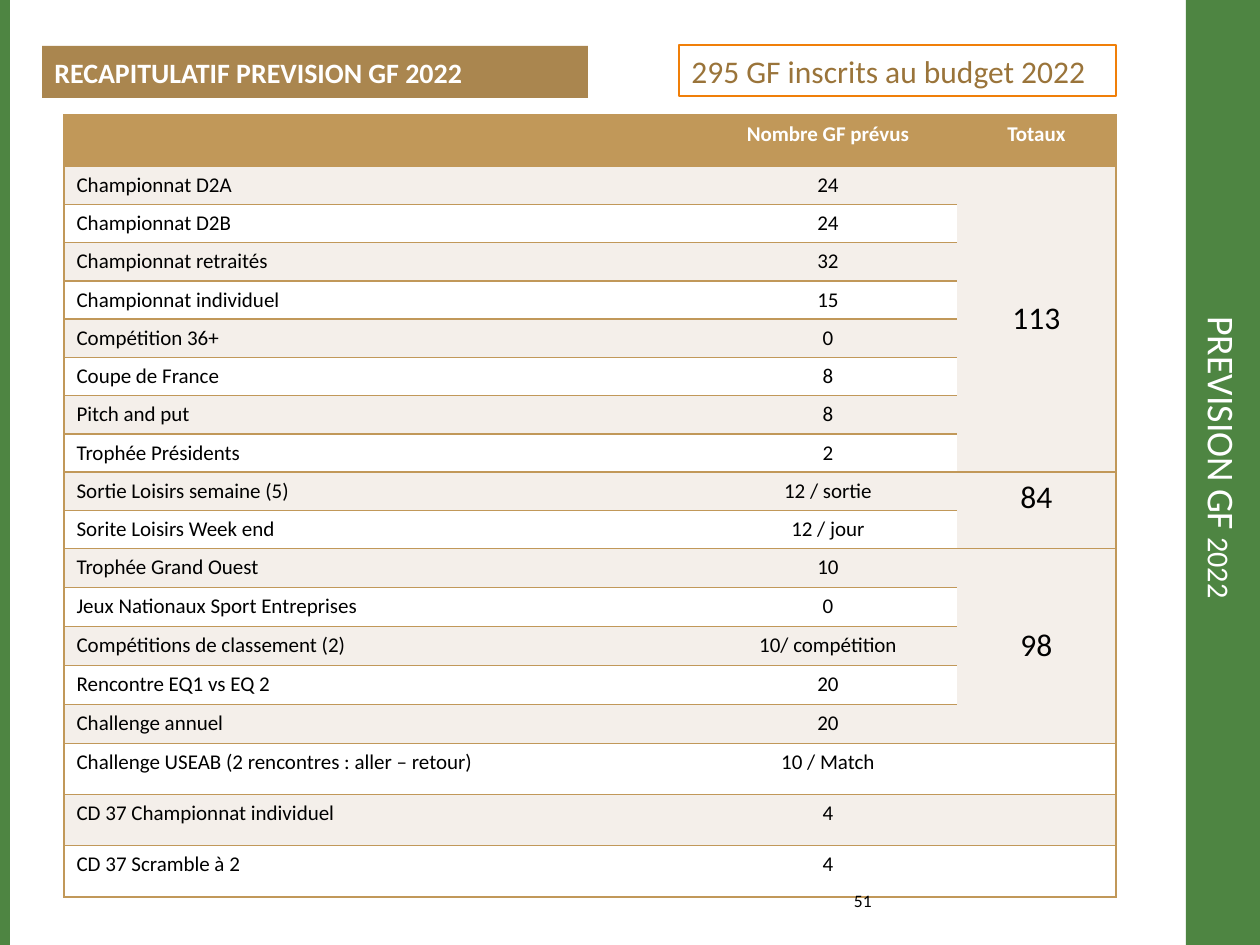
from pptx import Presentation
from pptx.dml.color import RGBColor
from pptx.enum.shapes import MSO_SHAPE as Shape
from pptx.enum.text import MSO_ANCHOR as Anchor, PP_ALIGN as Align
from pptx.oxml.ns import qn
from pptx.util import Pt
from lxml.etree import SubElement

PX = 914400 / 126
GREEN, TAN, CREAM, WHITE, BLACK = "4E8542", "C19859", "F4EFEA", "FFFFFF", "000000"

COLUMNS = [635, 258, 159]
ROW_HEIGHTS = [50] + [38] * 10 + [39] * 5 + [51] * 3
ROWS = [
    ("", "Nombre GF prévus"),
    ("Championnat D2A", "24"),
    ("Championnat D2B", "24"),
    ("Championnat retraités", "32"),
    ("Championnat individuel", "15"),
    ("Compétition 36+", "0"),
    ("Coupe de France", "8"),
    ("Pitch and put", "8"),
    ("Trophée Présidents", "2"),
    ("Sortie Loisirs semaine (5)", "12 / sortie"),
    ("Sorite Loisirs Week end", "12 / jour"),
    ("Trophée Grand Ouest", "10"),
    ("Jeux Nationaux Sport Entreprises", "0"),
    ("Compétitions de classement (2)", "10/ compétition"),
    ("Rencontre EQ1 vs EQ 2", "20"),
    ("Challenge annuel", "20"),
    ("Challenge USEAB (2 rencontres : aller – retour)", "10 / Match"),
    ("CD 37 Championnat individuel", "4"),
    ("CD 37 Scramble à 2", "4"),
]
TOTALS = [(1, 8, "113", Anchor.MIDDLE), (9, 10, "84", Anchor.TOP), (11, 15, "98", Anchor.MIDDLE)]


def px(*lengths):
    return [round(length * PX) for length in lengths]


def color(value):
    return RGBColor.from_string(value)


def write(frame, text, size, ink, bold=False, align=Align.LEFT):
    frame.text = text
    para = frame.paragraphs[0]
    para.alignment = align
    for span in para.runs:
        span.font.name = "Calibri"
        span.font.size = Pt(size)
        span.font.bold = bold
        span.font.color.rgb = color(ink)


def add_panel(page, box, fill=None, line=None):
    panel = page.shapes.add_shape(Shape.RECTANGLE, *px(*box))
    panel.shadow.inherit = False
    if fill:
        panel.fill.solid()
        panel.fill.fore_color.rgb = color(fill)
    else:
        panel.fill.background()
    if line:
        panel.line.color.rgb = color(line)
        panel.line.width = Pt(0.75)
    else:
        panel.line.fill.background()
    return panel


def add_label(page, box, text, size, ink, bold=False, fill=None, line=None):
    frame = add_panel(page, box, fill, line).text_frame
    frame.word_wrap = True
    frame.vertical_anchor = Anchor.MIDDLE
    write(frame, text, size, ink, bold)


def add_side_bands(page, box):
    left, top, width, height = box
    band = 74
    band_left = left + width - band
    add_panel(page, (band_left, top, band, height), GREEN)
    add_panel(page, (left, top, 10, height), GREEN)
    title = page.shapes.add_textbox(*px(band_left, top + 53, band, 809))
    frame = title.text_frame
    frame.word_wrap = True
    frame.vertical_anchor = Anchor.MIDDLE
    frame._txBody.bodyPr.set("vert", "vert")
    write(frame, "PREVISION GF 2022", 21.6, WHITE, align=Align.CENTER)
    for span in frame.paragraphs[0].runs:
        span.font._element.set("cap", "small")


def style_cell(cell, fill, sides):
    properties = cell._tc.get_or_add_tcPr()
    for side in "LRTB":
        border = SubElement(properties, qn(f"a:ln{side}"), w=str(Pt(1)))
        if side in sides:
            solid = SubElement(border, qn("a:solidFill"))
            SubElement(solid, qn("a:srgbClr"), val=TAN)
        else:
            SubElement(border, qn("a:noFill"))
    cell.fill.solid()
    cell.fill.fore_color.rgb = color(fill)


def add_forecast_table(page, box):
    table = page.shapes.add_table(len(ROWS), len(COLUMNS), *px(*box)).table
    table.first_row = table.horz_banding = False
    for column, width in zip(table.columns, px(*COLUMNS)):
        column.width = width
    for row, height in zip(table.rows, px(*ROW_HEIGHTS)):
        row.height = height

    inner_tops = {i for first, last, *_ in TOTALS for i in range(first + 1, last + 1)}
    inner_bottoms = {i - 1 for i in inner_tops}
    for i, (name, planned) in enumerate(ROWS):
        header = i == 0
        fill = TAN if header else CREAM if i % 2 else WHITE
        ink = WHITE if header else BLACK
        total_sides = "R" + "T" * (i not in inner_tops) + "B" * (i not in inner_bottoms)
        total_fill = CREAM if i in inner_tops else fill
        style_cell(table.cell(i, 0), fill, "LTB")
        style_cell(table.cell(i, 1), fill, "TB")
        style_cell(table.cell(i, 2), total_fill, total_sides)
        if name:
            write(table.cell(i, 0).text_frame, name, 12, ink)
        write(table.cell(i, 1).text_frame, planned, 12, ink, header, Align.CENTER)

    write(table.cell(0, 2).text_frame, "Totaux", 12, WHITE, True, Align.CENTER)
    for first, last, total, anchor in TOTALS:
        cell = table.cell(first, 2)
        cell.merge(table.cell(last, 2))
        cell.vertical_anchor = anchor
        write(cell.text_frame, total, 18, BLACK, align=Align.CENTER)


def add_page_number(page, box):
    frame = page.shapes.add_textbox(*px(*box)).text_frame
    frame.word_wrap = True
    frame.vertical_anchor = Anchor.MIDDLE
    write(frame, "51", 10, BLACK, align=Align.RIGHT)


def main():
    deck = Presentation()
    deck.slide_width, deck.slide_height = px(1260, 945)
    page = deck.slides.add_slide(deck.slide_layouts[6])
    add_side_bands(page, (0, 0, 1260, 945))
    add_label(page, (42, 46, 546, 52), "RECAPITULATIF PREVISION GF 2022", 16, WHITE, True, "AA864F")
    add_forecast_table(page, (64, 115, sum(COLUMNS), sum(ROW_HEIGHTS)))
    add_label(page, (679, 45, 437, 51), "295 GF inscrits au budget 2022", 18, "9A743A", line="F07F09")
    add_page_number(page, (748, 879, 136, 42))
    deck.save("out.pptx")


if __name__ == "__main__":
    main()
